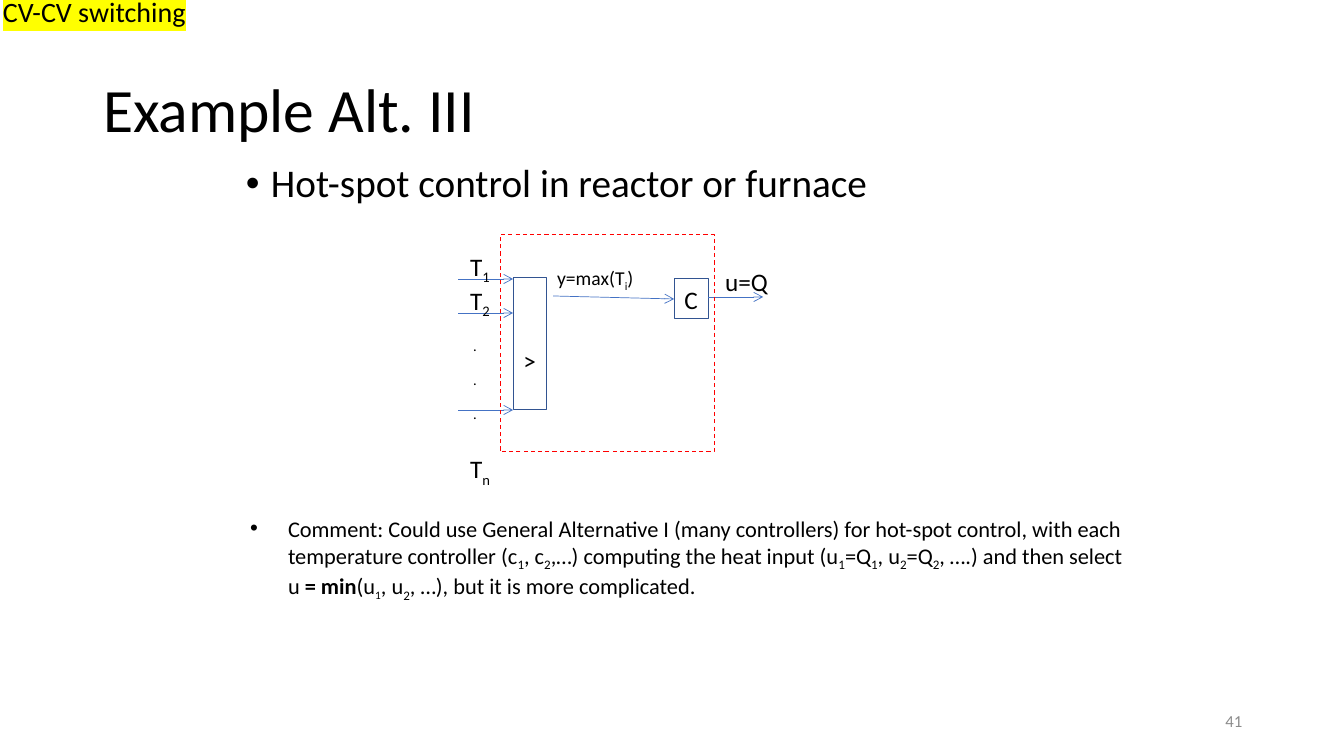
import pptx
import pptx.dml.color
import pptx.enum.dml
import pptx.enum.shapes
import pptx.enum.text
import pptx.oxml
import pptx.oxml.ns
import pptx.util

PX = 914400 / 100.8
BLACK = pptx.dml.color.RGBColor(0, 0, 0)
GRAY = pptx.dml.color.RGBColor(0x8C, 0x8C, 0x8C)
BLUE = pptx.dml.color.RGBColor(0x44, 0x72, 0xC4)
NAVY = pptx.dml.color.RGBColor(0x32, 0x54, 0x91)
RED = pptx.dml.color.RGBColor(0xFF, 0, 0)
YELLOW = pptx.dml.color.RGBColor(0xFF, 0xFF, 0)
ALIGN = pptx.enum.text.PP_ALIGN
ANCHOR = pptx.enum.text.MSO_ANCHOR

# Content: ~ encloses subscripts, * encloses bold
TITLE = "Example Alt. III"
TITLE_BOX = (93, 40, 1159, 146)
COMMENT = (
    "Comment: Could use General Alternative I (many controllers) for hot-spot control, "
    "with each temperature controller (c~1~, c~2~,…) computing the heat input "
    "(u~1~=Q~1~, u~2~=Q~2~, ….) and then select u *= min*(u~1~, u~2~, …), "
    "but it is more complicated."
)
BULLETS = [  # text, box, size, indent, line spacing
    ("Hot-spot control in reactor or furnace", (236, 159, 907, 90), 28, 25, 0.9),
    (COMMENT, (240, 510, 907, 90), 16, 38, 1.0),
]
INPUTS = ["T~1~", "T~2~", "~.~", "~.~", "~.~", "T~n~"]
INPUTS_BOX = (460, 246, 41, 204)
LABELS = [  # text, box, size
    ("y=max(T~i~)", (547, 261, 98, 54), 14),
    ("u=Q", (715, 261, 64, 40), 18),
]
SELECTOR = (513, 278, 33, 132)
CONTROLLER = (674, 279, 34, 40)
FRAME = (500, 235, 214, 217)
INPUT_LEVELS = [279, 313, 410]
INPUT_LEFT = 458
TAG, TAG_BOX = "CV-CV switching", (-7, -10, 206, 44)
PAGE, PAGE_BOX = "41", (950, 701, 302, 40)


def px(value):
    return round(value * PX)


def apply(target, values):
    for name, value in values.items():
        setattr(target, name, value)


def write(paragraph, text, size, color=BLACK):
    for bold_index, section in enumerate(text.split("*")):
        for sub_index, piece in enumerate(section.split("~")):
            if not piece:
                continue
            run = paragraph.add_run()
            run.text = piece
            apply(run.font, {"name": "Calibri", "size": pptx.util.Pt(size),
                             "bold": bold_index % 2 == 1})
            run.font.color.rgb = color
            if sub_index % 2:
                run._r.get_or_add_rPr().set("baseline", "-25000")


def fill_text(shape, lines, size, color=BLACK, wrap=False, align=ALIGN.LEFT,
              anchor=ANCHOR.TOP):
    frame = shape.text_frame
    apply(frame, {"word_wrap": wrap, "vertical_anchor": anchor,
                  "auto_size": pptx.enum.text.MSO_AUTO_SIZE.NONE})
    for index, line in enumerate(lines):
        paragraph = frame.add_paragraph() if index else frame.paragraphs[0]
        paragraph.alignment = align
        write(paragraph, line, size, color)
    return frame.paragraphs


def add_text(slide, box, lines, size, **options):
    return fill_text(slide.shapes.add_textbox(*map(px, box)), lines, size, **options)


def add_bullet(slide, text, box, size, indent, spacing):
    paragraph = add_text(slide, box, [text], size, wrap=True)[0]
    properties = paragraph._p.get_or_add_pPr()
    properties.set("marL", str(px(indent)))
    properties.set("indent", str(-px(indent)))
    for tag, name, value in (("buFont", "typeface", "Arial"), ("buChar", "char", "•")):
        pptx.oxml.ns.qn("a:" + tag)
        properties.append(pptx.oxml.parse_xml(
            f'<a:{tag} {pptx.oxml.ns.nsdecls("a")} {name}="{value}"/>'))
    paragraph.line_spacing = spacing
    return paragraph


def add_box(slide, box, color):
    shape = slide.shapes.add_shape(pptx.enum.shapes.MSO_SHAPE.RECTANGLE, *map(px, box))
    shape.shadow.inherit = False
    shape.fill.background()
    shape.line.color.rgb = color
    shape.line.width = pptx.util.Pt(0.75)
    return shape


def add_arrow(slide, x1, y1, x2, y2):
    arrow = slide.shapes.add_connector(
        pptx.enum.shapes.MSO_CONNECTOR.STRAIGHT, px(x1), px(y1), px(x2), px(y2))
    arrow.line.color.rgb = BLUE
    arrow.line.width = pptx.util.Pt(0.5)
    namespace = pptx.oxml.ns.nsdecls("a")
    arrow.line._get_or_add_ln().append(
        pptx.oxml.parse_xml(f'<a:tailEnd {namespace} type="arrow"/>'))
    arrow._element.spPr.append(pptx.oxml.parse_xml(f"<a:effectLst {namespace}/>"))
    return arrow


def main():
    presentation = pptx.Presentation()
    presentation.slide_width = pptx.util.Inches(13.33)
    presentation.slide_height = pptx.util.Inches(7.5)
    slide = presentation.slides.add_slide(presentation.slide_layouts[5])

    # Title and bullets
    title = slide.shapes.title
    apply(title, dict(zip(("left", "top", "width", "height"), map(px, TITLE_BOX))))
    fill_text(title, [TITLE], 44, wrap=True, anchor=ANCHOR.MIDDLE)[0].line_spacing = 0.9
    comment = [add_bullet(slide, *bullet) for bullet in BULLETS][-1]
    comment.runs[-4].font.size = pptx.util.Pt(14)

    # Selector and its inputs
    selector = add_box(slide, SELECTOR, NAVY)
    fill_text(selector, [">"], 18, align=ALIGN.CENTER)
    selector.text_frame.margin_top = px(67)
    for level in INPUT_LEVELS:
        add_arrow(slide, INPUT_LEFT, level, SELECTOR[0], level)
    inputs = add_text(slide, INPUTS_BOX, INPUTS, 18)
    for dot in inputs[2:5]:
        dot._p.get_or_add_pPr().set("marL", str(px(3)))
    inputs[-1].space_before = pptx.util.Pt(22)

    # Controller, its signals and the frame
    controller = add_box(slide, CONTROLLER, NAVY)
    fill_text(controller, ["C"], 18, align=ALIGN.CENTER)
    add_arrow(slide, 553, 296, 674, 299).end_connect(controller, 1)
    add_arrow(slide, 708, 297, 763, 297)
    for text, box, size in LABELS:
        add_text(slide, box, [text], size)
    frame = add_box(slide, FRAME, RED)
    frame.line.dash_style = pptx.enum.dml.MSO_LINE.DASH

    # Highlighted tag and page number
    tag = add_text(slide, TAG_BOX, [TAG], 20)[0].runs[0]
    tag._r.rPr.find(pptx.oxml.ns.qn("a:solidFill")).addnext(pptx.oxml.parse_xml(
        f'<a:highlight {pptx.oxml.ns.nsdecls("a")}><a:srgbClr val="{YELLOW}"/></a:highlight>'))
    add_text(slide, PAGE_BOX, [PAGE], 12, color=GRAY, wrap=True, align=ALIGN.RIGHT,
             anchor=ANCHOR.MIDDLE)

    presentation.save("out.pptx")


if __name__ == "__main__":
    main()
